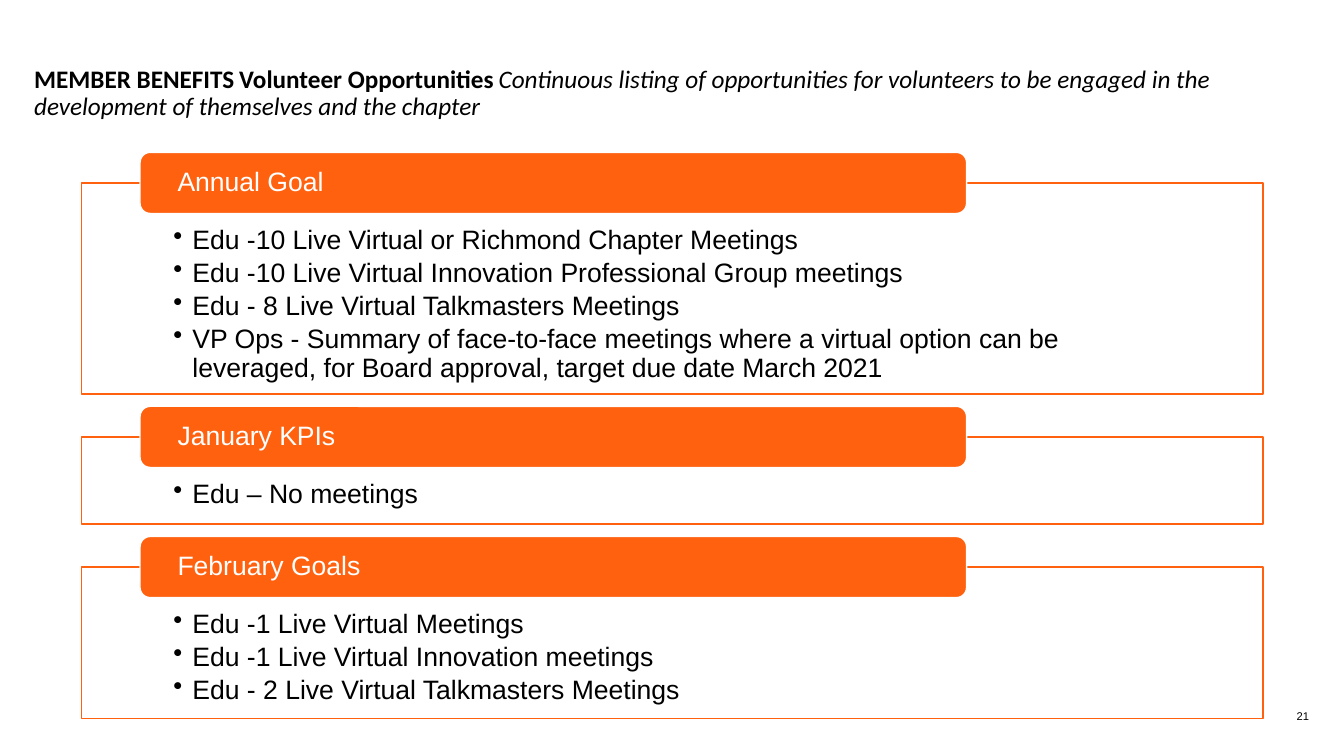
from lxml import etree
from pptx import Presentation
from pptx import util as u
from pptx.dml.color import RGBColor
from pptx.enum import shapes, text
from pptx.oxml.ns import qn

GOALS = [
    ("Annual Goal", 5.32, [
        "Edu -10 Live Virtual or Richmond Chapter Meetings",
        "Edu -10 Live Virtual Innovation Professional Group meetings",
        "Edu - 8 Live Virtual Talkmasters Meetings",
        "VP Ops - Summary of face-to-face meetings where a virtual option can be "
        "leveraged, for Board approval, target due date March 2021",
    ]),
    ("January KPIs", 2.2, ["Edu – No meetings"]),
    ("February Goals", 3.82, [
        "Edu -1 Live Virtual Meetings",
        "Edu -1 Live Virtual Innovation meetings",
        "Edu - 2 Live Virtual Talkmasters Meetings",
    ]),
]
TOP, GAP = 4.61, 1.08
TAB = 1.54


def color(code):
    return RGBColor.from_string(code)


class Deck:
    ORANGE, WHITE, BLACK = "FF610F", "FFFFFF", "000000"
    FONT, HEAD = "Arial", "Calibri"
    SIZE = 19

    def __init__(self):
        self.prs = Presentation()
        self.prs.slide_width, self.prs.slide_height = u.Cm(33.87), u.Cm(19.05)
        self.slide = self.prs.slides.add_slide(self.prs.slide_layouts[6])

    def frame(self, shape, anchor, pads=(0, 0, 0, 0)):
        """Set wrapping, anchor and left, top, right, bottom insets."""
        tf = shape.text_frame
        tf.word_wrap = True
        tf.vertical_anchor = anchor
        (tf.margin_left, tf.margin_top,
         tf.margin_right, tf.margin_bottom) = map(u.Cm, pads)
        return tf

    def run(self, para, words, size, ink, font=FONT, bold=False, italic=False):
        run = para.add_run()
        run.text = words
        run.font.name, run.font.size = font, u.Pt(size)
        run.font.bold, run.font.italic = bold, italic
        run.font.color.rgb = color(ink)

    def block(self, kind, place, fill, line):
        shape = self.slide.shapes.add_shape(kind, *map(u.Cm, place))
        shape.shadow.inherit = False
        shape.fill.solid()
        shape.fill.fore_color.rgb = color(fill)
        shape.line.color.rgb = color(line)
        shape.line.width = u.Pt(1)
        return shape

    def label(self, place, anchor, align, runs):
        box = self.slide.shapes.add_textbox(*map(u.Cm, place))
        para = self.frame(box, anchor).paragraphs[0]
        para.alignment = align
        for words, size, style in runs:
            self.run(para, words, size, self.BLACK, **style)
        return para

    def panel(self, top, height, items):
        """Draw an outlined box with a bullet list."""
        box = self.block(shapes.MSO_SHAPE.RECTANGLE,
                         (2.06, top, 29.77, height), self.WHITE, self.ORANGE)
        tint = box.fill._xPr.find(qn("a:solidFill"))[0]
        etree.SubElement(tint, qn("a:alpha"), val="90000")
        tf = self.frame(box, text.MSO_ANCHOR.TOP, (2.31, 1.1, 2.31, 0.38))
        for i, item in enumerate(items):
            para = tf.add_paragraph() if i else tf.paragraphs[0]
            props = para._p.get_or_add_pPr()
            props.set("marL", str(u.Cm(0.48)))
            props.set("indent", str(u.Cm(-0.48)))
            etree.SubElement(props, qn("a:buChar"), char="•")
            para.alignment = text.PP_ALIGN.LEFT
            para.line_spacing = 0.9
            para.space_after = u.Pt(3)
            self.run(para, item, self.SIZE, self.BLACK)

    def tab(self, top, words):
        """Draw the rounded heading that sits on a panel's upper edge."""
        box = self.block(shapes.MSO_SHAPE.ROUNDED_RECTANGLE,
                         (3.53, top, 20.83, TAB), self.ORANGE, self.WHITE)
        tf = self.frame(box, text.MSO_ANCHOR.MIDDLE, (0.87, 0, 0.87, 0))
        para = tf.paragraphs[0]
        para.alignment = text.PP_ALIGN.LEFT
        para.line_spacing = 0.9
        self.run(para, words, self.SIZE, self.WHITE)


def main():
    deck = Deck()
    top = TOP
    for name, height, items in GOALS:
        deck.panel(top, height, items)
        deck.tab(top - TAB / 2, name)
        top += height + GAP

    bold = {"font": deck.HEAD, "bold": True}
    slant = {"font": deck.HEAD, "italic": True}
    title = deck.label(
        (0.86, 0.91, 32.1, 2.92), text.MSO_ANCHOR.MIDDLE, text.PP_ALIGN.LEFT,
        [("MEMBER BENEFITS", 18, bold), (" ", 12, {}),
         ("Volunteer Opportunities", 18, bold), (" ", 12, {}),
         ("Continuous listing of opportunities for volunteers to be engaged in "
          "the development of themselves and the chapter", 18, slant)])
    title.line_spacing = 0.9
    deck.label((31.85, 17.65, 1.14, 0.56), text.MSO_ANCHOR.BOTTOM,
               text.PP_ALIGN.RIGHT, [("21", 8, {})])
    deck.prs.save("out.pptx")


if __name__ == "__main__":
    main()
